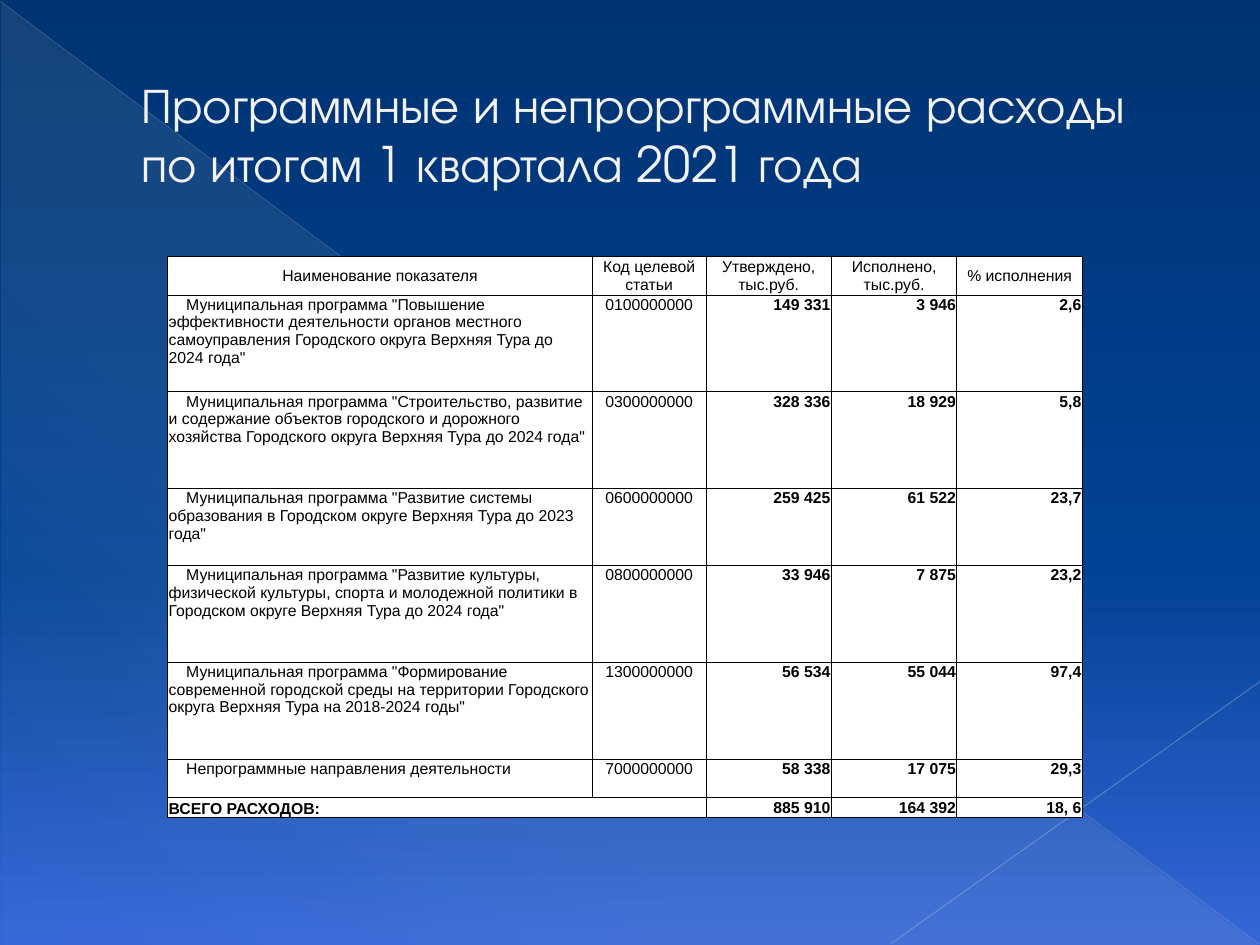
from lxml.etree import SubElement
from pptx import Presentation
from pptx.dml.color import RGBColor
from pptx.enum.shapes import MSO_CONNECTOR, MSO_SHAPE
from pptx.enum.text import MSO_ANCHOR, PP_ALIGN
from pptx.oxml.ns import qn
from pptx.util import Pt

COLUMN_WIDTHS = [242.6, 65, 71.7, 71.7, 71.7]
ROW_HEIGHTS = [21.3, 55.3, 55.3, 44, 55.3, 55.3, 22.2, 11]
HEADERS = ["Наименование показателя", "Код целевой статьи", "Утверждено, тыс.руб.",
           "Исполнено, тыс.руб.", "% исполнения"]
EXPENSES = [
    ['Муниципальная программа "Повышение эффективности деятельности органов местного '
     'самоуправления Городского округа Верхняя Тура до 2024 года"',
     "0100000000", "149 331", "3 946", "2,6"],
    ['Муниципальная программа "Строительство, развитие и содержание объектов городского и '
     'дорожного хозяйства Городского округа Верхняя Тура до 2024 года"',
     "0300000000", "328 336", "18 929", "5,8"],
    ['Муниципальная программа "Развитие системы образования в Городском округе '
     'Верхняя Тура до 2023 года"',
     "0600000000", "259 425", "61 522", "23,7"],
    ['Муниципальная программа "Развитие культуры, физической культуры, спорта и молодежной '
     'политики в Городском округе Верхняя Тура до 2024 года"',
     "0800000000", "33 946", "7 875", "23,2"],
    ['Муниципальная программа "Формирование современной городской среды на территории '
     'Городского округа Верхняя Тура на 2018-2024 годы"',
     "1300000000", "56 534", "55 044", "97,4"],
    ["Непрограммные направления деятельности", "7000000000", "58 338", "17 075", "29,3"],
]
TOTALS = ["ВСЕГО РАСХОДОВ:", "", "885 910", "164 392", "18, 6"]


def color(hex_string):
    return RGBColor.from_string(hex_string)


def add_color(parent, hex_string, opacity=100):
    element = SubElement(parent, qn("a:srgbClr"), val=hex_string)
    if opacity < 100:
        SubElement(element, qn("a:alpha"), val=str(opacity * 1000))


class SlideBuilder:
    title_font = "TeX Gyre Adventor"
    table_font = "Arial"
    title_color = "F2F2F2"
    title_outline = "375983"
    ink = "000000"
    paper = "FFFFFF"

    def __init__(self, slide):
        self.slide = slide

    def gradient(self, fill, stops, angle):
        fill.gradient()
        gradient = fill._xPr.find(qn("a:gradFill"))
        for child in list(gradient):
            gradient.remove(child)
        stop_list = SubElement(gradient, qn("a:gsLst"))
        for position, hex_string, opacity in stops:
            stop = SubElement(stop_list, qn("a:gs"), pos=str(position * 1000))
            add_color(stop, hex_string, opacity)
        SubElement(gradient, qn("a:lin"), ang=str(angle * 60000), scaled="0")

    def background(self, stops, angle):
        self.gradient(self.slide.background.fill, stops, angle)

    def triangle(self, left, top, width, height, stops, angle):
        shape = self.slide.shapes.add_shape(
            MSO_SHAPE.RIGHT_TRIANGLE, Pt(left), Pt(top), Pt(width), Pt(height))
        shape.shadow.inherit = False
        shape.line.fill.background()
        self.gradient(shape.fill, stops, angle)

    def line(self, start, end, hex_string, width, opacity):
        connector = self.slide.shapes.add_connector(
            MSO_CONNECTOR.STRAIGHT, *[Pt(value) for value in start + end])
        connector.line.width = Pt(width)
        connector.line.color.rgb = color(hex_string)
        properties = connector._element.spPr
        SubElement(properties.find(".//" + qn("a:srgbClr")), qn("a:alpha"), val=str(opacity * 1000))
        SubElement(properties, qn("a:effectLst"))

    def run(self, paragraph, text, font, size, hex_string, bold=False):
        run = paragraph.add_run()
        run.text = text
        run.font.name = font
        run.font.size = Pt(size)
        run.font.bold = bold
        run.font.color.rgb = color(hex_string)
        return run

    def title(self, text, left, top, width, height, indent):
        shape = self.slide.shapes.add_textbox(Pt(left), Pt(top), Pt(width), Pt(height))
        frame = shape.text_frame
        frame.word_wrap = True
        frame.vertical_anchor = MSO_ANCHOR.MIDDLE
        paragraph = frame.paragraphs[0]
        paragraph._p.get_or_add_pPr().set("marL", str(Pt(indent)))
        run = self.run(paragraph, text, self.title_font, 28, self.title_color)
        properties = run._r.get_or_add_rPr()
        outline = SubElement(properties, qn("a:ln"), w=str(Pt(0.5)))
        add_color(SubElement(outline, qn("a:solidFill")), self.title_outline)
        properties.insert(0, outline)

    def borders(self, cell):
        properties = cell._tc.get_or_add_tcPr()
        for position, side in enumerate(["lnL", "lnR", "lnT", "lnB"]):
            border = SubElement(properties, qn("a:" + side), w=str(Pt(0.5)))
            add_color(SubElement(border, qn("a:solidFill")), self.ink)
            properties.insert(position, border)

    def cell(self, cell, text, alignment, anchor, bold, indent):
        cell.margin_left = cell.margin_right = cell.margin_top = Pt(0.6)
        cell.margin_bottom = 0
        cell.vertical_anchor = anchor
        cell.fill.solid()
        cell.fill.fore_color.rgb = color(self.paper)
        self.borders(cell)
        paragraph = cell.text_frame.paragraphs[0]
        paragraph.alignment = alignment
        paragraph.font.size = Pt(9)
        if indent:
            paragraph._p.get_or_add_pPr().set("indent", str(Pt(indent)))
        if text:
            self.run(paragraph, text, self.table_font, 9, self.ink, bold)

    def table(self, left, top, widths, heights, rows):
        table = self.slide.shapes.add_table(
            len(rows), len(widths), Pt(left), Pt(top), Pt(sum(widths)), Pt(sum(heights))).table
        for column, width in zip(table.columns, widths):
            column.width = Pt(width)
        for row, height in zip(table.rows, heights):
            row.height = Pt(height)
        last = len(rows) - 1
        alignments = [PP_ALIGN.LEFT, PP_ALIGN.CENTER] + [PP_ALIGN.RIGHT] * 3
        for i, values in enumerate(rows):
            for j, text in enumerate(values):
                header, total = i == 0, i == last
                alignment = PP_ALIGN.CENTER if header else alignments[j]
                anchor = MSO_ANCHOR.TOP
                if header:
                    anchor = MSO_ANCHOR.MIDDLE
                elif total and j == 0:
                    anchor = MSO_ANCHOR.BOTTOM
                bold = total or (not header and j > 1)
                indent = 10 if j == 0 and not header and not total else 0
                self.cell(table.cell(i, j), text, alignment, anchor, bold, indent)
        table.cell(last, 0).merge(table.cell(last, 1))


def main():
    presentation = Presentation()
    presentation.slide_width, presentation.slide_height = Pt(720), Pt(540)
    builder = SlideBuilder(presentation.slides.add_slide(presentation.slide_layouts[6]))
    builder.background([(0, "003371", 100), (60, "004396", 100), (100, "3566D7", 100)], 90)
    builder.triangle(0.7, 1.4, 718.6, 538.6,
                     [(0, "EEECE1", 10), (70, "EEECE1", 8), (100, "EEECE1", 1)], 133)
    builder.line((0, 0.7), (719.3, 539.3), "ADB6CE", 0.39, 35)
    builder.line((720, 389.5), (509, 539.3), "B6BED3", 0.47, 45)
    builder.title("Программные и непрорграммные расходы по итогам 1 квартала 2021 года",
                  36, 21, 648, 110, 38)
    builder.table(95.8, 146.3, COLUMN_WIDTHS, ROW_HEIGHTS, [HEADERS] + EXPENSES + [TOTALS])
    presentation.save("out.pptx")


if __name__ == "__main__":
    main()
